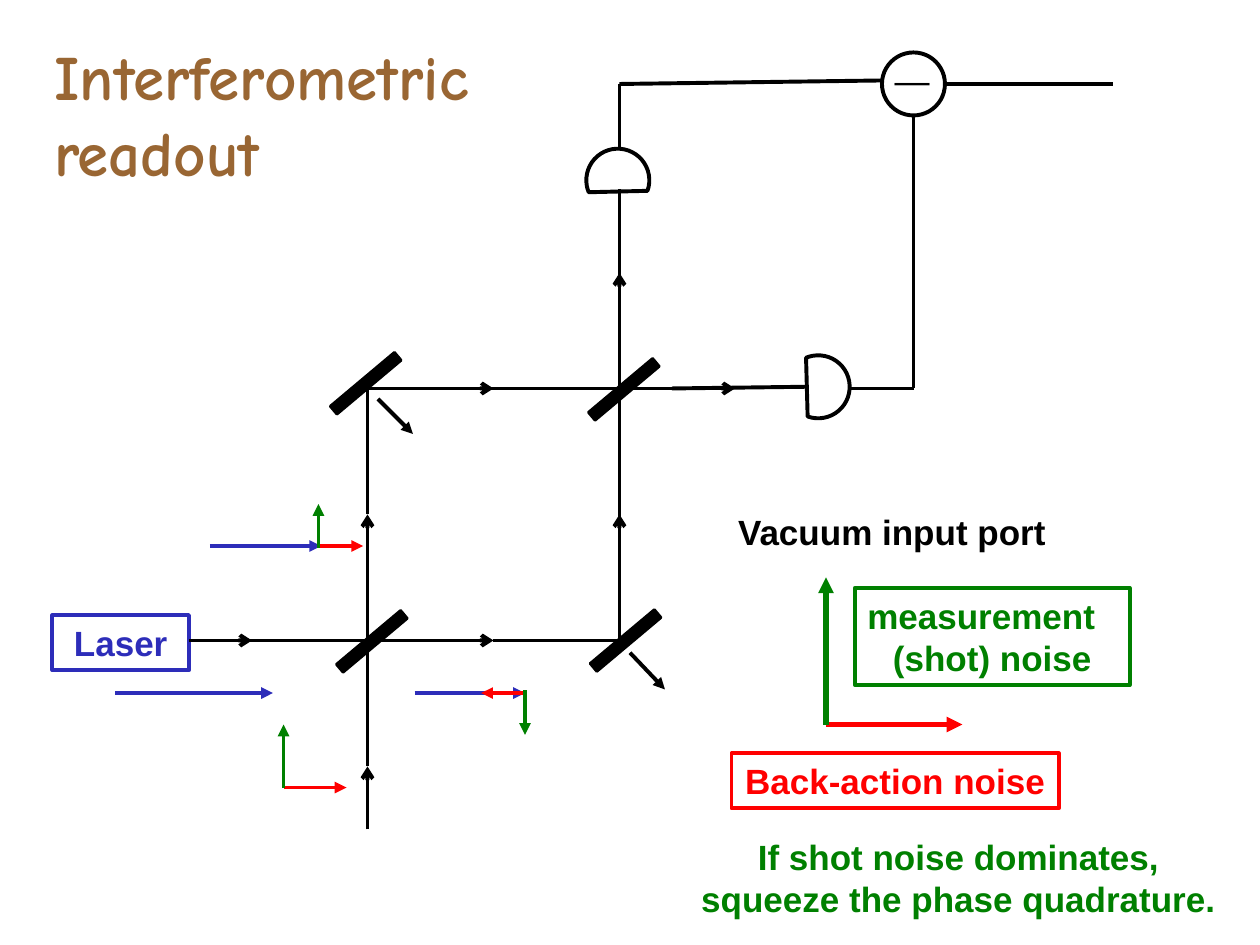
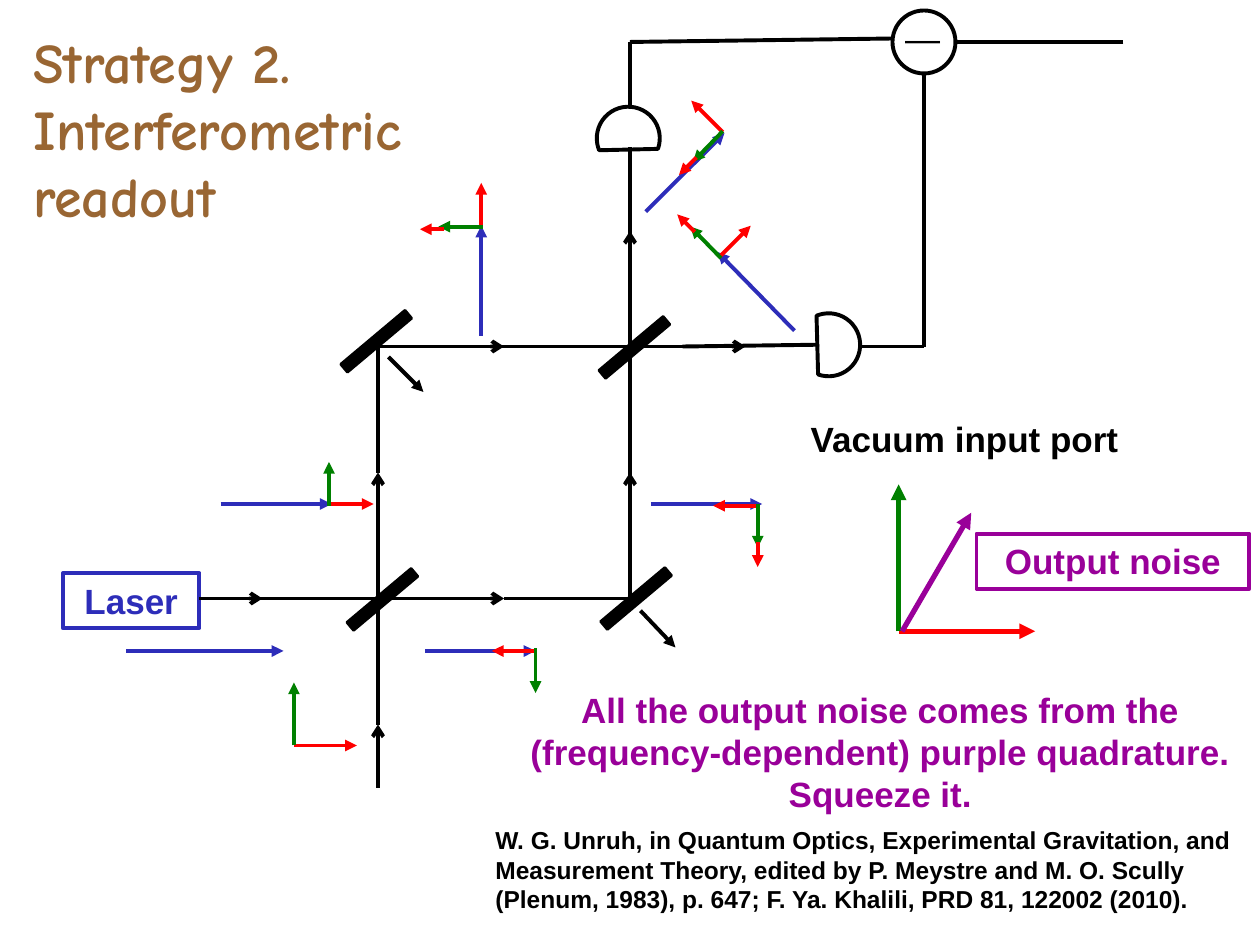
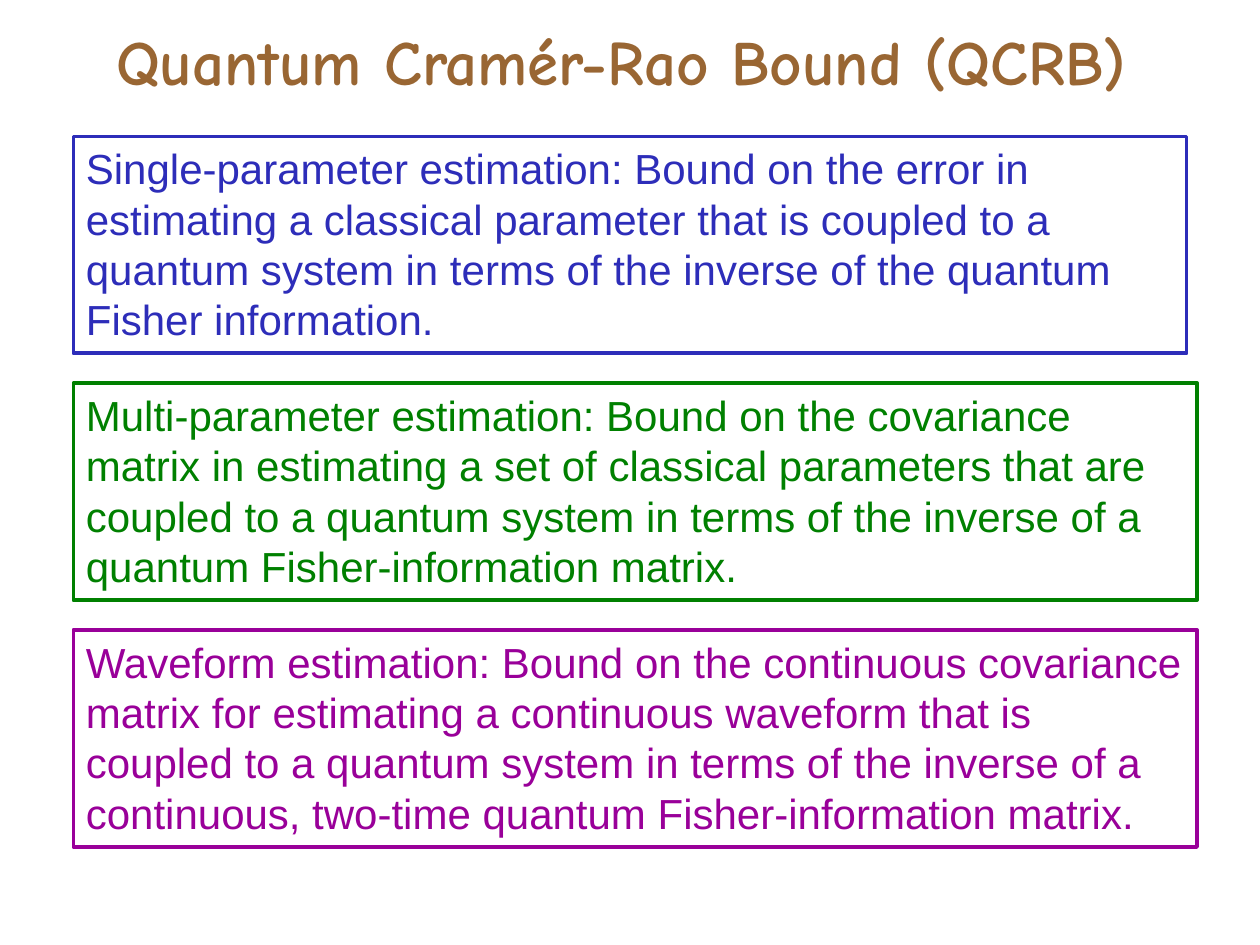
"""Build three slides on interferometric readout and the quantum Cramér-Rao bound."""

from typing import NamedTuple

import lxml.etree
import pptx
import pptx.dml.color
import pptx.enum.shapes
import pptx.enum.text
import pptx.oxml.ns
import pptx.util

Pt = pptx.util.Pt
RGBColor = pptx.dml.color.RGBColor
SHAPE = pptx.enum.shapes.MSO_SHAPE
ALIGN = pptx.enum.text.PP_ALIGN

BLACK = RGBColor(0x00, 0x00, 0x00)
BLUE = RGBColor(0x2D, 0x2D, 0xB9)
BROWN = RGBColor(0x99, 0x66, 0x33)
GREEN = RGBColor(0x00, 0x80, 0x00)
PURPLE = RGBColor(0x99, 0x00, 0x99)
RED = RGBColor(0xFF, 0x00, 0x00)

BODY_FONT = "Arial"
TITLE_FONT = "Comic Neue"
LINE_WIDTH = 2.25
AXIS_WIDTH = 3


class Arrow(NamedTuple):
    """A straight line, with an optional head at its end."""

    x1: float
    y1: float
    x2: float
    y2: float
    color: RGBColor = BLACK
    head: str = "triangle"
    width: float = LINE_WIDTH


class Part(NamedTuple):
    """An optical part drawn as a preset shape."""

    kind: SHAPE
    x: float
    y: float
    w: float
    h: float
    rotation: float = 0
    filled: bool = False
    adjustments: tuple[float, ...] = ()


class Label(NamedTuple):
    """Text in a box, framed or plain, with one alignment per paragraph."""

    lines: tuple[str, ...]
    x: float
    y: float
    w: float
    h: float
    color: RGBColor = BLACK
    size: float = 20
    bold: bool = True
    aligns: tuple[ALIGN, ...] = (ALIGN.CENTER,)
    framed: bool = False
    wrap: bool = True
    font: str = BODY_FONT


BEAMS = [
    Arrow(108, 366, 144, 366, head="arrow"),
    Arrow(138, 366, 282, 366, head="arrow"),
    Arrow(282, 366, 354, 366, head=""),
    Arrow(210, 474, 210, 438, head="arrow"),
    Arrow(210, 438, 210, 294, head="arrow"),
    Arrow(210, 294, 210, 222, head=""),
    Arrow(210, 222, 282, 222, head="arrow"),
    Arrow(276, 222, 420, 222, head="arrow"),
    Arrow(354, 366, 354, 294, head="arrow"),
    Arrow(354, 300, 354, 156, head="arrow"),
    Arrow(384, 222, 462, 221, head=""),
    Arrow(354, 186, 354, 108, head=""),
]
WIRES = [
    Arrow(486, 222, 522, 222, head=""),
    Arrow(354, 84, 354, 48, head=""),
    Arrow(522, 222, 522, 66, head=""),
    Arrow(504, 46, 354, 48, head=""),
    Arrow(636, 48, 540, 48, head=""),
]
KICKS = [Arrow(360, 373, 380, 394), Arrow(216, 228, 236, 248)]
INPUT_PHASORS = [
    Arrow(66, 396, 156, 396, BLUE),
    Arrow(162, 450, 198, 450, RED),
    Arrow(162, 450, 162, 414, GREEN),
]
ARM_PHASORS = [
    Arrow(120, 312, 183.5, 312, BLUE),
    Arrow(182, 312, 207.5, 312, RED),
    Arrow(182, 313, 182, 288, GREEN),
    Arrow(237, 396, 300, 396, BLUE),
    Arrow(300, 396, 275, 396, RED),
    Arrow(300, 394.5, 300, 420, GREEN),
]
REFLECTED_PHASORS = [
    Arrow(275, 192, 275, 129, BLUE),
    Arrow(275, 130, 275, 104.5, RED),
    Arrow(276, 129.5, 250.5, 129.5, GREEN),
    Arrow(254, 131, 240, 131, RED),
    Arrow(372, 288, 435.5, 288, BLUE),
    Arrow(433, 289, 407.5, 289, RED),
    Arrow(433, 288, 433, 313, GREEN),
    Arrow(433, 310, 433, 324, RED),
]
OUTPUT_PHASORS = [
    Arrow(369, 121, 414, 76, BLUE),
    Arrow(413, 75.5, 395, 57.5, RED),
    Arrow(413, 75, 396, 92.5, GREEN),
    Arrow(398, 90, 388, 100, RED),
    Arrow(454, 189, 410, 144, BLUE),
    Arrow(411, 147, 429, 129, RED),
    Arrow(412, 147.5, 394.5, 129.5, GREEN),
    Arrow(397, 132.5, 387, 122.5, RED),
]
MIRROR_CORNERS = [(188.5, 363.5), (333.5, 363), (332.5, 219.5), (185, 216)]
MIRRORS = [Part(SHAPE.RECTANGLE, x, y, 48, 6, 320, True) for x, y in MIRROR_CORNERS]
DETECTORS = [
    Part(SHAPE.CHORD, x, y, 36, 36, turn, adjustments=(28.66, 162))
    for x, y, turn in [(449.5, 203, 199.6), (335, 85, 109.8)]
]
SUBTRACTOR = Part(SHAPE.OVAL, 504, 30, 36, 36)
LASER = Label(("Laser",), 30, 351.5, 78, 31.5, BLUE, framed=True)
MINUS = Label(("—",), 504, 30, 34.5, 31.5, bold=False, wrap=False)

BOUNDS = [
    (BLUE, 636, "Single-parameter estimation: Bound on the error in estimating a classical "
     "parameter that is coupled to a quantum system in terms of the inverse of the quantum "
     "Fisher information."),
    (GREEN, 642, "Multi-parameter estimation: Bound on the covariance matrix in estimating a "
     "set of classical parameters that are coupled to a quantum system in terms of the inverse "
     "of a quantum Fisher-information matrix."),
    (PURPLE, 642, "Waveform estimation: Bound on the continuous covariance matrix for "
     "estimating a continuous waveform that is coupled to a quantum system in terms of the "
     "inverse of a continuous, two-time quantum Fisher-information matrix."),
]


def apply(target: object, values: dict) -> None:
    """Set each named attribute of the target."""
    for name, value in values.items():
        setattr(target, name, value)


def set_line(line, color: RGBColor, width: float) -> None:
    """Give a line its colour and width."""
    line.color.rgb = color
    line.width = Pt(width)


def add_arrow(s, a: Arrow, dx: float = 0, dy: float = 0) -> None:
    """Draw one line, shifted by the given offset."""
    ends = (a.x1 + dx, a.y1 + dy, a.x2 + dx, a.y2 + dy)
    straight = pptx.enum.shapes.MSO_CONNECTOR.STRAIGHT
    c = s.shapes.add_connector(straight, *map(Pt, ends))
    set_line(c.line, a.color, a.width)
    qn = pptx.oxml.ns.qn
    sp_pr = c._element.spPr
    if a.head:
        lxml.etree.SubElement(sp_pr.find(qn("a:ln")), qn("a:tailEnd"), type=a.head)
    lxml.etree.SubElement(sp_pr, qn("a:effectLst"))


def add_part(s, part: Part, dx: float, dy: float) -> None:
    """Draw one optical part, shifted by the given offset."""
    sp = s.shapes.add_shape(part.kind, *map(Pt, (part.x + dx, part.y + dy, part.w, part.h)))
    sp.shadow.inherit = False
    sp.rotation = part.rotation
    for i, value in enumerate(part.adjustments):
        sp.adjustments[i] = value
    if part.filled:
        sp.fill.solid()
        sp.fill.fore_color.rgb = BLACK
    else:
        sp.fill.background()
    set_line(sp.line, BLACK, 1.5 if part.filled else LINE_WIDTH)


def add_label(s, label: Label, dx: float = 0, dy: float = 0) -> None:
    """Draw one label, shifted by the given offset."""
    box = tuple(map(Pt, (label.x + dx, label.y + dy, label.w, label.h)))
    if label.framed:
        sp = s.shapes.add_shape(SHAPE.RECTANGLE, *box)
        sp.shadow.inherit = False
        sp.fill.background()
        set_line(sp.line, label.color, LINE_WIDTH)
    else:
        sp = s.shapes.add_textbox(*box)
    tf = sp.text_frame
    apply(tf, {"word_wrap": label.wrap, "vertical_anchor": pptx.enum.text.MSO_ANCHOR.TOP})
    for i, line in enumerate(label.lines):
        p = tf.add_paragraph() if i else tf.paragraphs[0]
        p.alignment = label.aligns[i % len(label.aligns)]
        r = p.add_run()
        r.text = line
        apply(r.font, {"name": label.font, "size": Pt(label.size), "bold": label.bold})
        r.font.color.rgb = label.color


def add_title(s, text: str, x: float, y: float, w: float, h: float, size: float,
              align: ALIGN = ALIGN.LEFT) -> None:
    """Write the slide title."""
    add_label(s, Label((text,), x, y, w, h, BROWN, size, aligns=(align,), font=TITLE_FONT))


def add_interferometer(s, dx: float = 0, dy: float = 0) -> None:
    """Draw the laser, beams, detectors, mirrors and input phasors."""
    add_label(s, LASER, dx, dy)
    for arrow in BEAMS + WIRES:
        add_arrow(s, arrow, dx, dy)
    for part in [*DETECTORS, SUBTRACTOR, *MIRRORS]:
        add_part(s, part, dx, dy)
    add_label(s, MINUS, dx, dy)
    for arrow in KICKS + INPUT_PHASORS + ARM_PHASORS:
        add_arrow(s, arrow, dx, dy)


def add_vacuum_port(s, x: float, y: float) -> None:
    """Draw the two noise axes from their origin, with the port label above."""
    add_arrow(s, Arrow(x, y, x + 78, y, RED, width=AXIS_WIDTH))
    add_arrow(s, Arrow(x, y, x, y - 84, GREEN, width=AXIS_WIDTH))
    add_label(s, Label(("Vacuum input port",), x - 58, y - 126, 191.5, 31.5, wrap=False))


def build_readout(s) -> None:
    """Build the slide on shot noise and back-action noise."""
    add_title(s, "Interferometric readout", 24, 18, 336, 94, 36)
    add_interferometer(s)
    add_vacuum_port(s, 472, 414)
    add_label(s, Label(("Back-action noise",), 418, 430.5, 187, 31.5, RED,
                       framed=True, wrap=False))
    add_label(s, Label(("measurement", "(shot) noise"), 488.5, 336, 157, 55.5, GREEN,
                       aligns=(ALIGN.LEFT, ALIGN.CENTER), framed=True))
    add_label(s, Label(("If shot noise dominates, squeeze the phase quadrature.",),
                       390, 474, 315.5, 55.5, GREEN))


def build_strategy(s) -> None:
    """Build the slide on squeezing the output quadrature."""
    add_title(s, "Strategy 2. Interferometric readout", 12, 12, 336, 124, 32)
    add_interferometer(s, 6, -24)
    for arrow in REFLECTED_PHASORS + OUTPUT_PHASORS:
        add_arrow(s, arrow)
    add_label(s, Label(("All the output noise comes from the (frequency-dependent) purple "
                        "quadrature. Squeeze it.",), 288, 390, 430, 80, PURPLE))
    add_label(s, Label(("W. G. Unruh, in Quantum Optics, Experimental Gravitation, and "
                        "Measurement Theory, edited by P. Meystre and M. O. Scully "
                        "(Plenum, 1983), p. 647; F. Ya. Khalili, PRD 81, 122002 (2010).",),
                       276, 468, 438, 58, size=14, aligns=(ALIGN.LEFT,)))
    add_vacuum_port(s, 513.5, 360.75)
    add_arrow(s, Arrow(515.5, 360.75, 555, 293, PURPLE, width=AXIS_WIDTH))
    add_label(s, Label(("Output noise",), 558, 305, 156, 31.5, PURPLE, framed=True))


def build_bounds(s) -> None:
    """Build the slide with the three forms of the bound."""
    add_title(s, "Quantum Cramér-Rao Bound (QCRB)", 7, 9.5, 696, 51, 36, ALIGN.CENTER)
    for i, (color, w, text) in enumerate(BOUNDS):
        add_label(s, Label((text,), 42, 78 + 141 * i, w, 124, color, 24, False,
                           (ALIGN.LEFT,), framed=True))


def main() -> None:
    """Build and save the presentation."""
    prs = pptx.Presentation()
    apply(prs, {"slide_width": Pt(720), "slide_height": Pt(540)})
    for build in (build_readout, build_strategy, build_bounds):
        build(prs.slides.add_slide(prs.slide_layouts[6]))
    prs.save("out.pptx")


if __name__ == "__main__":
    main()
